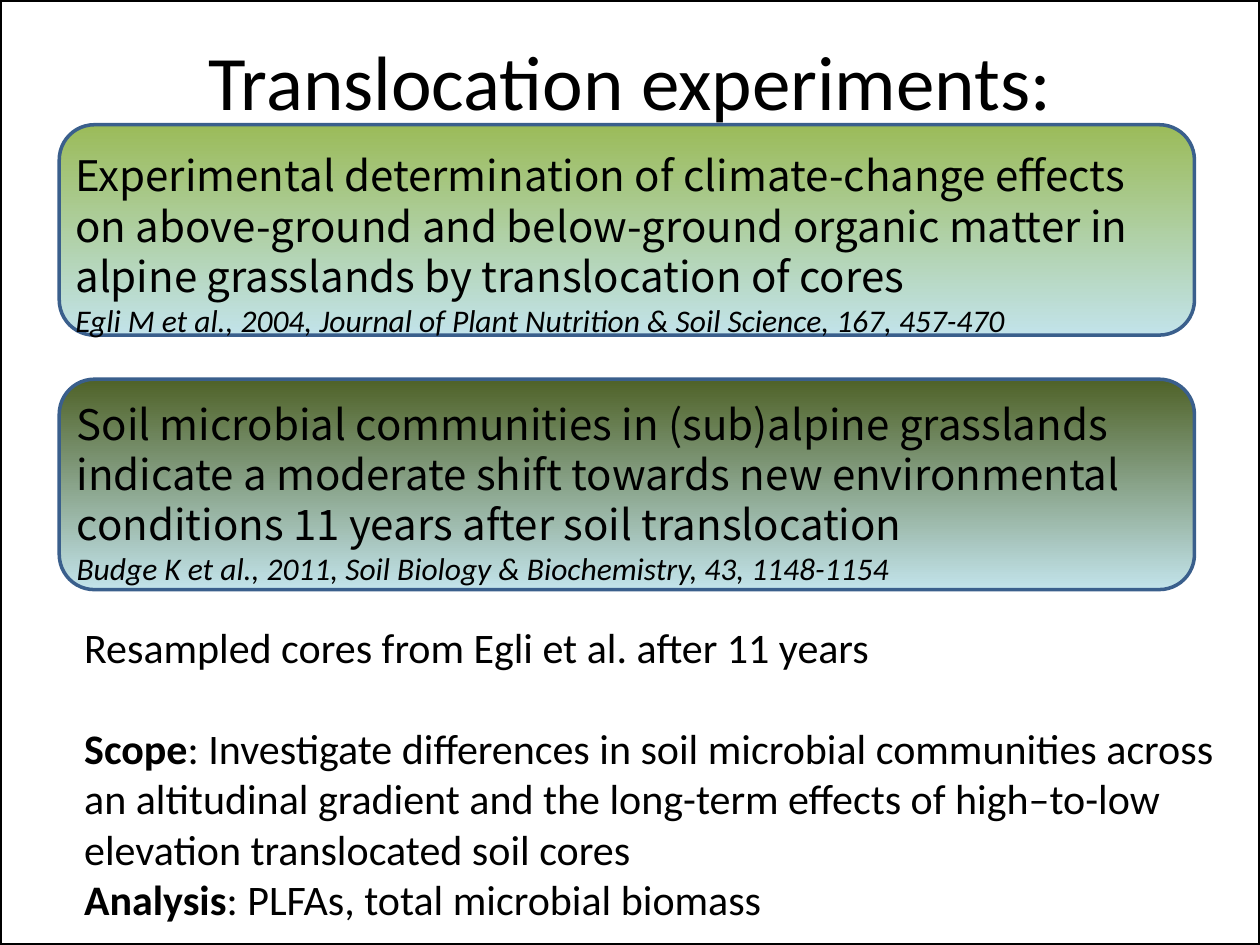
from pptx import Presentation
from pptx.dml.color import RGBColor
from pptx.enum.shapes import MSO_SHAPE
from pptx.enum.text import MSO_ANCHOR, MSO_AUTO_SIZE, PP_ALIGN
from pptx.util import Inches, Pt


def paint(target, tone):
    target.rgb = RGBColor.from_string(tone)


def add_run(par, text, font, size, bold=False, italic=False):
    run = par.add_run()
    run.text = text
    run.font.name, run.font.size = font, Pt(size)
    run.font.bold, run.font.italic = bold, italic
    paint(run.font.color, "000000")


deck = Presentation()
deck.slide_width, deck.slide_height = Inches(10), Inches(7.5)
wide, high = deck.slide_width, deck.slide_height
slide = deck.slides.add_slide(deck.slide_layouts[5])
shapes = slide.shapes

title = shapes.title
title.left, title.top = int(wide * 0.05), Inches(0.01)
title.width, title.height = int(wide * 0.9), Inches(1.25)
title.text_frame.text = "Translocation experiments:"
title.text_frame.vertical_anchor = MSO_ANCHOR.MIDDLE
head = title.text_frame.paragraphs[0]
head.alignment = PP_ALIGN.CENTER
head.font.name, head.font.size = "Calibri", Pt(44)
paint(head.font.color, "000000")

# Two cited papers, one card each
papers = [
    (0.99, 0.5, 1.14, "9BBB59",
     "Experimental determination of climate-change effects on above-ground "
     "and below-ground organic matter in alpine grasslands by translocation of cores",
     "Egli M et al., 2004, Journal of Plant Nutrition & Soil Science, 167, 457-470"),
    (3.01, 0.51, 3.11, "4F6228",
     "Soil microbial communities in (sub)alpine grasslands indicate a moderate "
     "shift towards new environmental conditions 11 years after soil translocation",
     "Budge K et al., 2011, Soil Biology & Biochemistry, 43, 1148-1154"),
]
for top, left, text_top, tone, name, source in papers:
    card = shapes.add_shape(MSO_SHAPE.ROUNDED_RECTANGLE, Inches(0.47),
                            Inches(top), Inches(9.01), Inches(1.67))
    card.shadow.inherit = False
    card.fill.gradient()
    card.fill.gradient_angle = 270
    for stop, shade in zip(card.fill.gradient_stops, (tone, "C2E3EA")):
        paint(stop.color, shade)
    for stop, place in zip(card.fill.gradient_stops, (0, 1)):
        stop.position = place
    paint(card.line.color, "3A5F8C")
    card.line.width = Pt(2)

    box = shapes.add_textbox(Inches(left), Inches(text_top),
                             Inches(8.98), Inches(1.57))
    box.text_frame.word_wrap = True
    par = box.text_frame.paragraphs[0]
    add_run(par, name, "Noto Sans CJK SC", 24)
    par.add_line_break()
    add_run(par, source, "Calibri", 18, italic=True)

notes = shapes.add_textbox(Inches(0.57), Inches(4.88), Inches(9.43), Inches(2.52))
frame = notes.text_frame
frame.word_wrap = True
frame.auto_size = MSO_AUTO_SIZE.SHAPE_TO_FIT_TEXT
add_run(frame.paragraphs[0], "Resampled cores from Egli et al. after 11 years",
        "Calibri", 24)
aims = frame.add_paragraph()
aims.space_before = Pt(29)
add_run(aims, "Scope", "Calibri", 24, bold=True)
add_run(aims, ": Investigate differences in soil microbial communities across an "
        "altitudinal gradient and the long-term effects of high–to-low elevation "
        "translocated soil cores", "Calibri", 24)
aims.add_line_break()
add_run(aims, "Analysis", "Calibri", 24, bold=True)
add_run(aims, ": PLFAs, total microbial biomass", "Calibri", 24)

border = shapes.add_shape(MSO_SHAPE.RECTANGLE, 0, 0, wide, high)
border.shadow.inherit = False
border.fill.background()
paint(border.line.color, "000000")
border.line.width = Pt(2)

deck.save("out.pptx")
